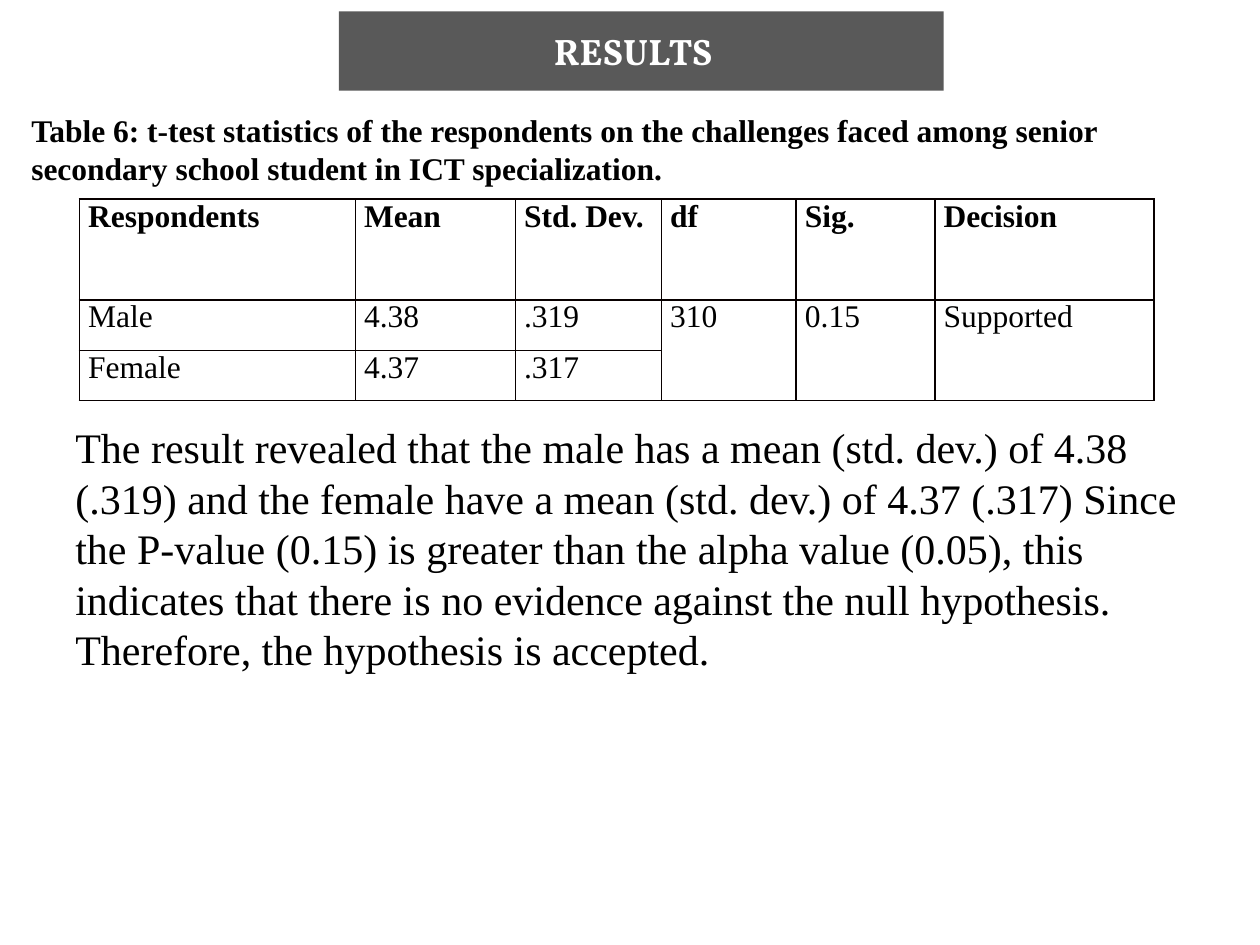
from pptx import Presentation
from pptx.dml.color import RGBColor
from pptx.enum.shapes import MSO_SHAPE
from pptx.enum.text import MSO_ANCHOR, PP_ALIGN
from pptx.oxml import parse_xml
from pptx.oxml.ns import nsdecls
from pptx.util import Inches, Pt

RECT = MSO_SHAPE.RECTANGLE
MIDDLE = MSO_ANCHOR.MIDDLE
LEFT, CENTER = PP_ALIGN.LEFT, PP_ALIGN.CENTER

COLORS = {"banner": "595959", "white": "FFFFFF", "text": "000000", "border": "080000"}
TITLE = "RESULTS"
CAPTION = ("Table 6: t-test statistics of the respondents on the challenges faced "
           "among senior secondary school student in ICT specialization.")
ROWS = [
    ["Respondents", "Mean", "Std. Dev.", "df", "Sig.", "Decision"],
    ["Male", "4.38", ".319", "310", "0.15", "Supported"],
    ["Female", "4.37", ".317", None, None, None],
]
BODY = ("The result revealed that the male has a mean (std. dev.) of 4.38 (.319) and "
        "the female have a mean (std. dev.) of 4.37 (.317) Since the P-value (0.15) is "
        "greater than the alpha value (0.05), this indicates that there is no evidence "
        "against the null hypothesis. Therefore, the hypothesis is accepted.")
COL_WIDTHS = [2.19, 1.27, 1.16, 1.07, 1.1, 1.74]
ROW_HEIGHTS = [0.8, 0.4, 0.4]


def box(*lengths):
    return [Inches(v) for v in lengths]


def write(tf, text, size=18, font="Times New Roman", color="text", bold=False, align=LEFT):
    tf.word_wrap = True
    p = tf.paragraphs[0]
    p.alignment = align
    r = p.add_run()
    r.text = text
    r.font.size = Pt(size)
    r.font.name = font
    r.font.bold = bold
    r.font.color.rgb = RGBColor.from_string(COLORS[color])


def add_borders(cell):
    tc_pr = cell._tc.get_or_add_tcPr()
    for i, side in enumerate(("lnL", "lnR", "lnT", "lnB")):
        tc_pr.insert(i, parse_xml(
            f'<a:{side} {nsdecls("a")} w="{Pt(1)}"><a:solidFill>'
            f'<a:srgbClr val="{COLORS["border"]}"/></a:solidFill></a:{side}>'))


prs = Presentation()
prs.slide_width, prs.slide_height = box(10, 7.5)
s = prs.slides.add_slide(prs.slide_layouts[6])

sp = s.shapes.add_shape(RECT, *box(2.69, 0.09, 4.8, 0.63))
sp.shadow.inherit = False
sp.fill.solid()
sp.fill.fore_color.rgb = RGBColor.from_string(COLORS["banner"])
sp.line.fill.background()
tf = sp.text_frame
tf.vertical_anchor = MIDDLE
tf.margin_left, tf.margin_right = box(0.05, 0.18)
write(tf, TITLE, size=21, font="Vollkorn", color="white", bold=True, align=CENTER)

write(s.shapes.add_textbox(*box(0.15, 0.83, 9.64, 0.71)).text_frame, CAPTION, bold=True)
write(s.shapes.add_textbox(*box(0.5, 3.3, 9.07, 2.56)).text_frame, BODY, size=24)

frame = s.shapes.add_table(len(ROWS), len(COL_WIDTHS),
                           *box(0.63, 1.58, sum(COL_WIDTHS), sum(ROW_HEIGHTS)))
table = frame.table
for col, width in zip(table.columns, COL_WIDTHS):
    col.width = Inches(width)
for row, height in zip(table.rows, ROW_HEIGHTS):
    row.height = Inches(height)
for i, values in enumerate(ROWS):
    for j, value in enumerate(values):
        cell = table.cell(i, j)
        cell.fill.background()
        add_borders(cell)
        cell.margin_left = cell.margin_right = Inches(0.07)
        cell.margin_top = cell.margin_bottom = 0
        if value is None:
            table.cell(i - 1, j).merge(cell)
        else:
            write(cell.text_frame, value, bold=i == 0)

prs.save("out.pptx")
